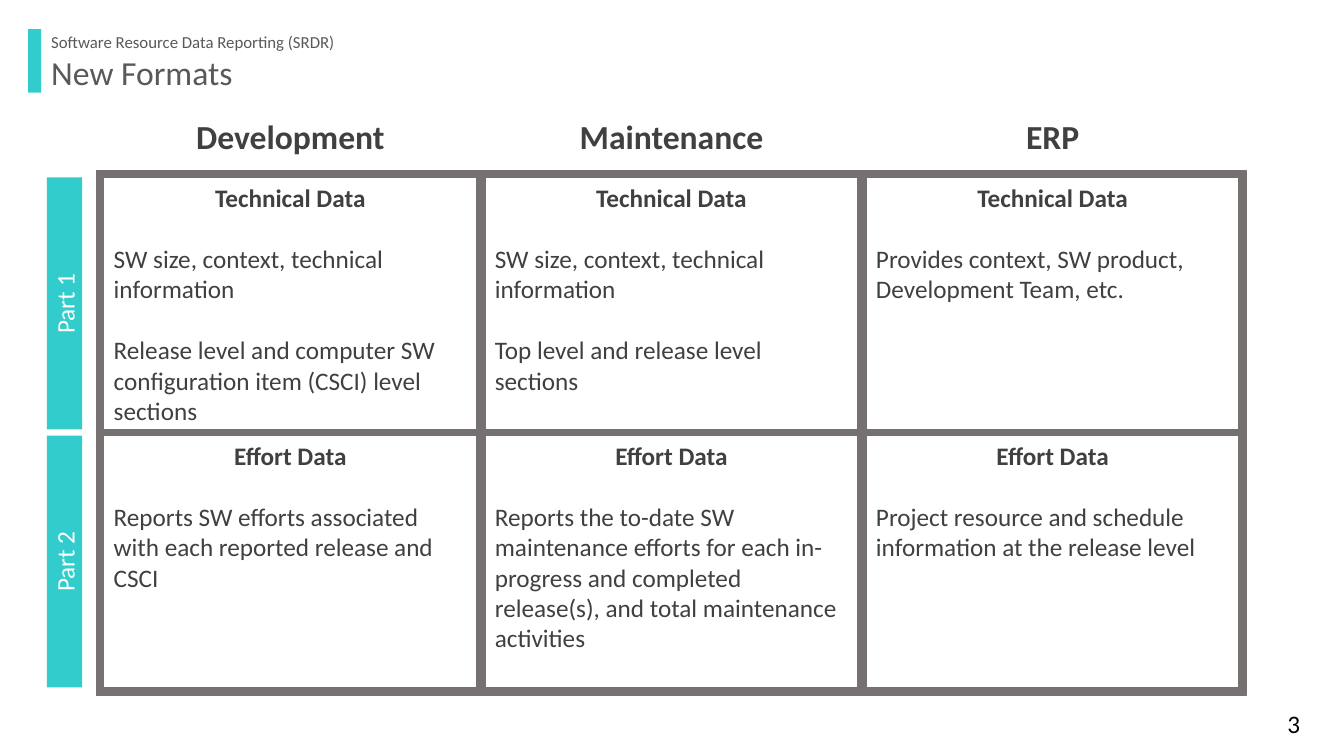
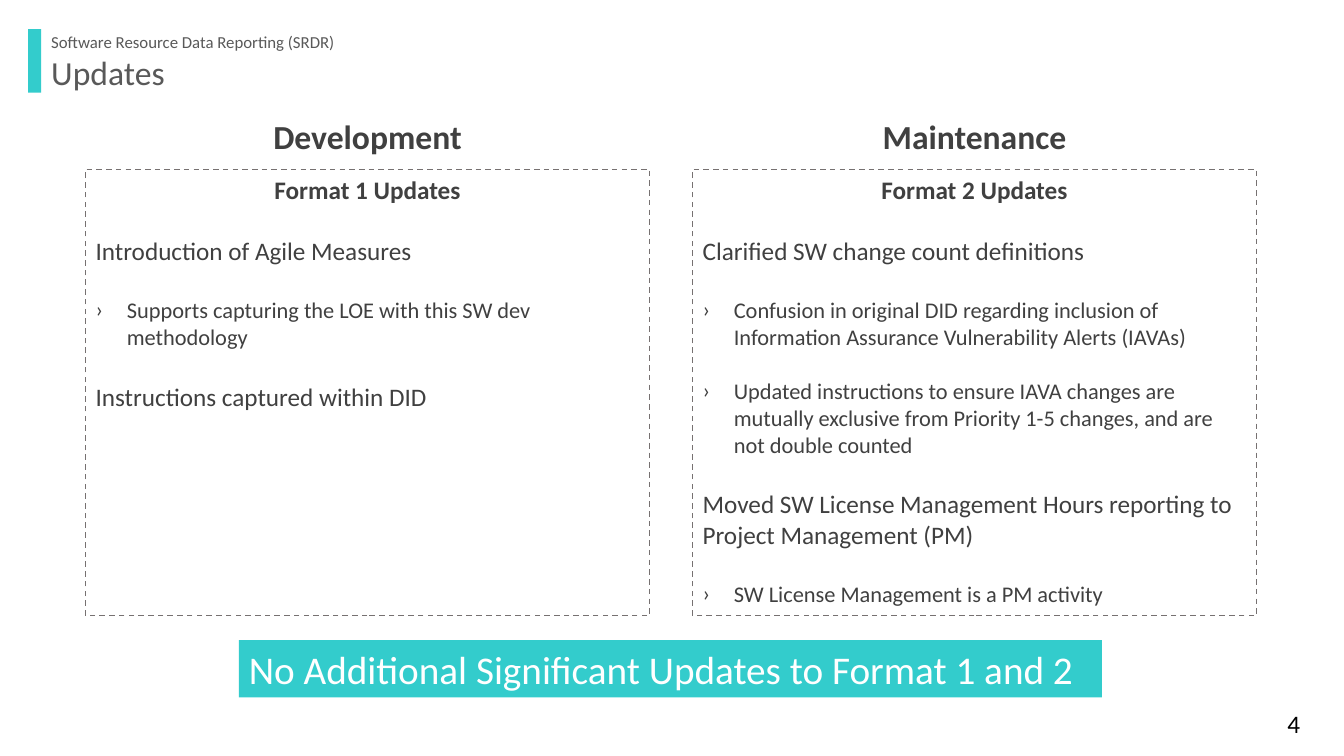
from lxml.etree import SubElement
from pptx import Presentation
from pptx.dml.color import RGBColor
from pptx.enum.dml import MSO_LINE
from pptx.enum.shapes import MSO_SHAPE as Shape
from pptx.enum.text import MSO_ANCHOR as Anchor, PP_ALIGN as Align
from pptx.oxml.ns import qn
from pptx.util import Inches, Pt

FONT = "Calibri"
TEAL, GRAY, DARK, MID = "33CCCC", "767171", "404040", "595959"
WHITE, BLACK = "FFFFFF", "000000"
TOPIC = "Software Resource Data Reporting (SRDR)"

# Each column: heading, then one list of paragraphs per part
FORMATS = [
    ("Development", [
        ["SW size, context, technical information",
         "Release level and computer SW configuration item (CSCI) level sections"],
        ["Reports SW efforts associated with each reported release and CSCI"],
    ]),
    ("Maintenance", [
        ["SW size, context, technical information",
         "Top level and release level sections"],
        ["Reports the to-date SW maintenance efforts for each in-progress and "
         "completed release(s), and total maintenance activities"],
    ]),
    ("ERP", [
        ["Provides context, SW product, Development Team, etc."],
        ["Project resource and schedule information at the release level"],
    ]),
]
PARTS = [("Part 1", "Technical Data"), ("Part 2", "Effort Data")]

# Each panel: heading, title, then topics with their bullets
UPDATES = [
    ("Development", "Format 1 Updates", [
        ("Introduction of Agile Measures",
         ["Supports capturing the LOE with this SW dev methodology"]),
        ("Instructions captured within DID", []),
    ]),
    ("Maintenance", "Format 2 Updates", [
        ("Clarified SW change count definitions",
         ["Confusion in original DID regarding inclusion of Information "
          "Assurance Vulnerability Alerts (IAVAs)",
          "Updated instructions to ensure IAVA changes are mutually exclusive "
          "from Priority 1-5 changes, and are not double counted"]),
        ("Moved SW License Management Hours reporting to Project Management (PM)",
         ["SW License Management is a PM activity"]),
    ]),
]
BANNER = "No Additional Significant Updates to Format 1 and 2"


def color(code):
    return RGBColor.from_string(code)


def add_rect(slide, x, y, w, h, fill=None, line=None):
    rect = slide.shapes.add_shape(
        Shape.RECTANGLE, Inches(x), Inches(y), Inches(w), Inches(h))
    rect.shadow.inherit = False
    if fill:
        rect.fill.solid()
        rect.fill.fore_color.rgb = color(fill)
    else:
        rect.fill.background()
    if line:
        rect.line.color.rgb = color(line)
        rect.line.width = Pt(1)
    else:
        rect.line.fill.background()
    rect.text_frame.word_wrap = True
    rect.text_frame.vertical_anchor = Anchor.TOP
    return rect


def write(para, text, size, code, bold=False, align=Align.LEFT):
    para.alignment = align
    run = para.add_run()
    run.text = text
    run.font.name = FONT
    run.font.size = Pt(size)
    run.font.bold = bold
    run.font.color.rgb = color(code)


def add_text(slide, x, y, w, h, text, size, code, **style):
    box = slide.shapes.add_textbox(Inches(x), Inches(y), Inches(w), Inches(h))
    box.text_frame.word_wrap = True
    para = box.text_frame.paragraphs[0]
    write(para, text, size, code, **style)
    return para


def add_bullet(para):
    props = para._p.get_or_add_pPr()
    props.set("marL", str(Inches(0.31)))
    props.set("indent", str(-Inches(0.31)))
    SubElement(props, qn("a:buFont")).set("typeface", FONT)
    SubElement(props, qn("a:buChar")).set("char", "›")


def fill_body(rect, title, items):
    """Write a centred title, then (text, is bullet) items one line apart."""
    frame = rect.text_frame
    write(frame.paragraphs[0], title, 18, DARK, bold=True, align=Align.CENTER)
    after = False
    for text, bullet in items:
        para = frame.add_paragraph()
        if bullet:
            add_bullet(para)
        para.space_before = Pt(19.5 if bullet and after else 22)
        write(para, text, 16 if bullet else 18, DARK)
        after = bullet


def add_head(slide, text, x, w):
    """Centre a column heading over a column at x of width w."""
    wide = 3.29
    add_text(slide, x + (w - wide) / 2, 1.1, wide, 0.5, text, 24, DARK,
             bold=True, align=Align.CENTER)


def new_slide(deck, title, number):
    slide = deck.slides.add_slide(deck.slide_layouts[6])
    add_rect(slide, 0.28, 0.29, 0.13, 0.63, TEAL)
    add_text(slide, 12.67, 6.98, 0.55, 0.4, str(number), 18, BLACK)
    for y, w, h, text, size in ((0.51, 5.28, 0.55, title, 24),
                                (0.29, 4.73, 0.3, TOPIC, 12)):
        para = add_text(slide, 0.41, y, w, h, text, size, MID)
        para.line_spacing = 0.9
    return slide


def build_formats(deck):
    slide = new_slide(deck, "New Formats", 3)
    left, top, wide, high = 1.03, 1.76, 3.7, 2.5
    add_rect(slide, 0.96, 1.69, 11.4, 5.21, GRAY, GRAY)
    rows = [top + i * (high + 0.06) for i in range(len(PARTS))]
    for col, (head, cells) in enumerate(FORMATS):
        x = left + col * (wide + 0.08)
        add_head(slide, head, x, wide)
        for y, (_, title), texts in zip(rows, PARTS, cells):
            cell = add_rect(slide, x, y, wide, high, WHITE, GRAY)
            fill_body(cell, title, [(text, False) for text in texts])
    mid, thick = 0.64, 0.35
    for y, (part, _) in zip(rows, PARTS):
        tab = add_rect(slide, mid - high / 2, y + (high - thick) / 2,
                       high, thick, TEAL)
        tab.rotation = 270
        tab.text_frame.vertical_anchor = Anchor.MIDDLE
        write(tab.text_frame.paragraphs[0], part, 18, WHITE, align=Align.CENTER)


def build_updates(deck):
    slide = new_slide(deck, "Updates", 4)
    wide = 5.59
    for col, (head, title, topics) in enumerate(UPDATES):
        x = 0.85 + col * (wide + 0.43)
        add_head(slide, head, x, wide)
        panel = add_rect(slide, x, 1.68, wide, 4.43, line=GRAY)
        panel.line.dash_style = MSO_LINE.DASH
        items = []
        for topic, points in topics:
            items.append((topic, False))
            items += [(point, True) for point in points]
        fill_body(panel, title, items)
    bar = add_rect(slide, 2.37, 6.35, 8.56, 0.57, TEAL)
    write(bar.text_frame.paragraphs[0], BANNER, 28, WHITE)


def main():
    deck = Presentation()
    deck.slide_width, deck.slide_height = Inches(13.33), Inches(7.5)
    build_formats(deck)
    build_updates(deck)
    deck.save("out.pptx")


if __name__ == "__main__":
    main()
